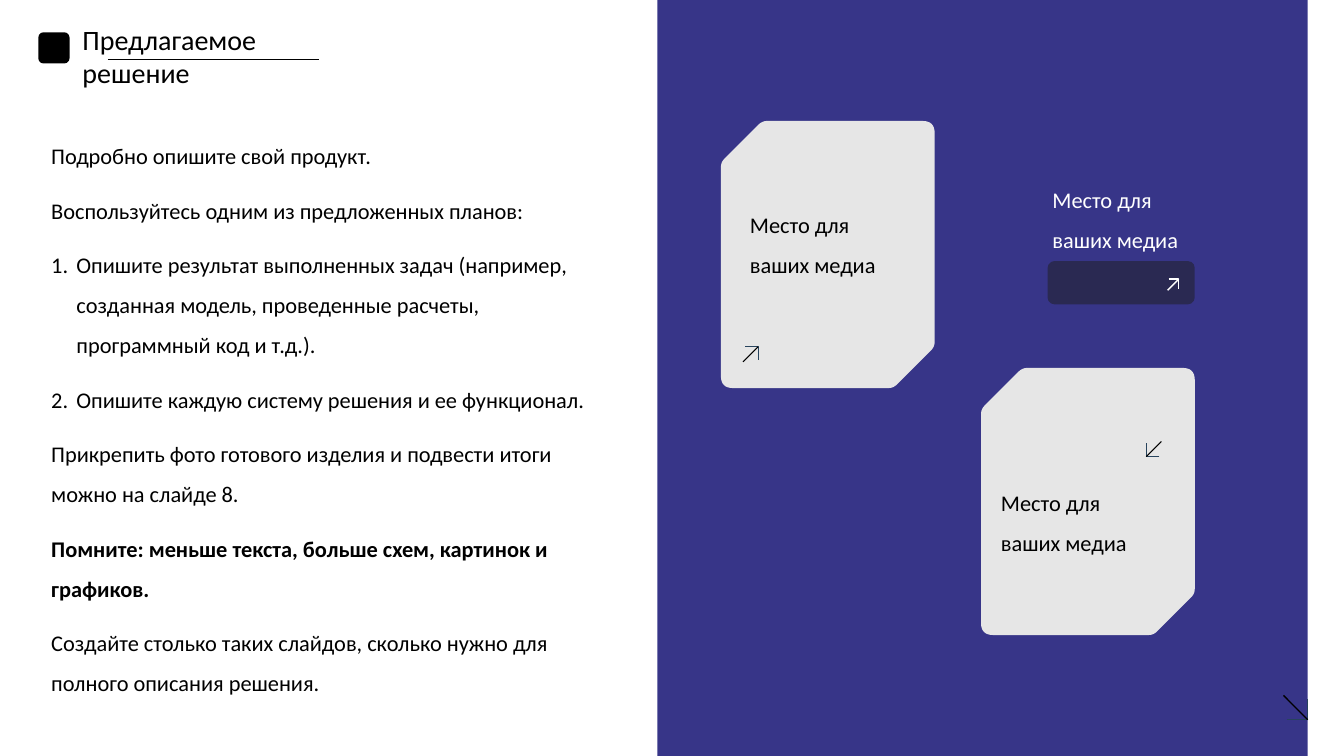
from math import hypot

from lxml.etree import SubElement
from pptx import Presentation
from pptx.dml.color import RGBColor
from pptx.enum.shapes import MSO_CONNECTOR, MSO_SHAPE
from pptx.enum.text import MSO_ANCHOR
from pptx.oxml.ns import qn
from pptx.util import Inches, Pt

SLIDE_W, SLIDE_H = 13.33, 7.5
BLACK, WHITE = "000000", "FFFFFF"
INDIGO, CARD_GREY, HEAD_BLUE, BUTTON_DARK = "373588", "E6E6E6", "28445D", "1E1E1E"
CARD_W, CARD_H, CARD_CUT = 2.12, 2.65, 0.41
MEDIA_TEXT = "Место для ваших медиа"
PLAN_STEPS = [
    "Опишите результат выполненных задач (например, созданная модель, "
    "проведенные расчеты, программный код и т.д.).",
    "Опишите каждую систему решения и ее функционал.",
]
REMINDER = "Помните: меньше текста, больше схем, картинок и графиков."
BODY = [
    "Подробно опишите свой продукт.",
    "Воспользуйтесь одним из предложенных планов:",
    *PLAN_STEPS,
    "Прикрепить фото готового изделия и подвести итоги можно на слайде 8.",
    REMINDER,
    "Создайте столько таких слайдов, сколько нужно для полного описания решения.",
]


def paint(color_format, color):
    color_format.rgb = RGBColor.from_string(color)


def fill_shape(shape, color):
    shape.shadow.inherit = False
    shape.fill.solid()
    paint(shape.fill.fore_color, color)
    shape.line.fill.background()


def add_round_rect(slide, box, color, corner):
    block = slide.shapes.add_shape(MSO_SHAPE.ROUNDED_RECTANGLE, *map(Inches, box))
    block.adjustments[0] = corner
    fill_shape(block, color)
    return block


def add_outline(slide, points, close):
    corners = [(Inches(x), Inches(y)) for x, y in points]
    builder = slide.shapes.build_freeform(*corners[0], scale=1.0)
    builder.add_line_segments(corners[1:], close=close)
    outline = builder.convert_to_shape()
    outline.shadow.inherit = False
    return outline


def add_line(slide, start, end, color, width):
    line = slide.shapes.add_connector(
        MSO_CONNECTOR.STRAIGHT, *map(Inches, (*start, *end)))
    paint(line.line.color, color)
    line.line.width = Pt(width)
    SubElement(line._element.spPr, qn("a:effectLst"))


def add_text(slide, box, lines, size, color):
    frame = slide.shapes.add_textbox(*map(Inches, box)).text_frame
    frame.word_wrap = True
    frame.text = "\n".join(lines)
    for paragraph in frame.paragraphs:
        for run in paragraph.runs:
            run.font.name = "Calibri"
            run.font.size = Pt(size)
            paint(run.font.color, color)
    return frame


def add_spaced_text(slide, box, lines, color):
    frame = add_text(slide, box, lines, 16, color)
    for paragraph in frame.paragraphs:
        paragraph.line_spacing = 1.5
        paragraph.space_before = Pt(10)
    return frame


def add_arrow(slide, tip, direction, head, shaft, width, shaft_color=BLACK,
              head_color=HEAD_BLUE):
    """Diagonal arrow: an open corner at the tip and a shaft leading to it."""
    (x, y), (dx, dy) = tip, direction
    barbs = add_outline(
        slide, [(x - dx * head, y), tip, (x, y - dy * head)], close=False)
    barbs.fill.background()
    paint(barbs.line.color, head_color)
    barbs.line.width = Pt(width)
    add_line(slide, (x - dx * shaft, y - dy * shaft), tip, shaft_color, width)


def rounded(vertices, steps=8):
    """Replace every (x, y, reach) vertex with a sampled curve."""
    points = []
    for i, (x, y, reach) in enumerate(vertices):
        ends = []
        for nx, ny, _ in (vertices[i - 1], vertices[(i + 1) % len(vertices)]):
            share = reach / hypot(nx - x, ny - y)
            ends.append((x + (nx - x) * share, y + (ny - y) * share))
        (ax, ay), (bx, by) = ends
        for step in range(steps + 1):
            t = step / steps
            a, m, b = (1 - t) ** 2, 2 * t * (1 - t), t ** 2
            points.append((a * ax + m * x + b * bx, a * ay + m * y + b * by))
    return points


def add_card(slide, left, top):
    right, bottom = left + CARD_W, top + CARD_H
    card = add_outline(slide, rounded([
        (left + CARD_CUT, top, 0.05), (right, top, 0.12),
        (right, bottom - CARD_CUT, 0.05), (right - CARD_CUT, bottom, 0.05),
        (left, bottom, 0.12), (left, top + CARD_CUT, 0.05)]), close=True)
    fill_shape(card, CARD_GREY)


def add_media_text(slide, left, top, color=BLACK):
    add_spaced_text(slide, (left, top, 1.76, 1.36), [MEDIA_TEXT], color)


def add_header(slide, left, top):
    add_round_rect(slide, (left, top, 0.31, 0.31), BLACK, 0.167)
    title = add_text(slide, (left + 0.34, top - 1.2, 6.73, 2.87),
                     ["Предлагаемое", "решение"], 20, BLACK)
    title.vertical_anchor = MSO_ANCHOR.MIDDLE
    add_line(slide, (left + 0.69, top + 0.27), (left + 2.78, top + 0.27), BLACK, 0.5)


def add_body(slide, box):
    frame = add_spaced_text(slide, box, BODY, BLACK)
    for paragraph in frame.paragraphs:
        if paragraph.text in PLAN_STEPS:
            props = paragraph._p.get_or_add_pPr()
            props.set("marL", str(Inches(0.25)))
            props.set("indent", str(-Inches(0.25)))
            SubElement(props, qn("a:buFont"), typeface="+mj-lt")
            SubElement(props, qn("a:buAutoNum"), type="arabicPeriod")
        paragraph.runs[0].font.bold = paragraph.text == REMINDER


def add_button(slide, left, top):
    button = add_round_rect(slide, (left, top, 1.46, 0.43), BUTTON_DARK, 0.161)
    tint = button.fill._xPr.find(qn("a:solidFill"))[0]
    SubElement(tint, qn("a:alpha"), val="50000")
    add_arrow(slide, (left + 1.3, top + 0.18), (1, -1), 0.1, 0.11, 1, WHITE, WHITE)


def add_media_panel(slide, left, width):
    # Turned panel that bleeds over the top and bottom edges
    length, middle = 9.36, 3.435
    panel = add_round_rect(
        slide, (left + (width - length) / 2, middle - width / 2, length, width),
        INDIGO, 0.092)
    panel.rotation = 90

    # Upper card
    x, y = left + 0.63, 1.2
    add_card(slide, x, y)
    add_media_text(slide, x + 0.19, y + 0.71)
    add_arrow(slide, (x + 0.37, y + 2.24), (1, -1), 0.13, 0.15, 0.75)

    # Lower card
    x, y = left + 3.21, 3.65
    add_card(slide, x, y)
    add_media_text(slide, x + 0.1, y + 1.02)
    add_arrow(slide, (x + 1.64, y + 0.88), (-1, 1), 0.13, 0.15, 0.75)

    # Caption with button
    add_button(slide, left + 3.87, 2.59)
    add_media_text(slide, left + 3.82, 1.66, WHITE)

    # Corner arrow
    add_arrow(slide, (left + width, 7.14), (1, 1), 0.21, 0.24, 1)


def main():
    deck = Presentation()
    deck.slide_width, deck.slide_height = Inches(SLIDE_W), Inches(SLIDE_H)
    slide = deck.slides.add_slide(deck.slide_layouts[6])
    add_media_panel(slide, 6.52, 6.45)
    add_header(slide, 0.38, 0.32)
    add_body(slide, (0.41, 1.23, 5.79, 5.91))
    deck.save("out.pptx")


if __name__ == "__main__":
    main()
